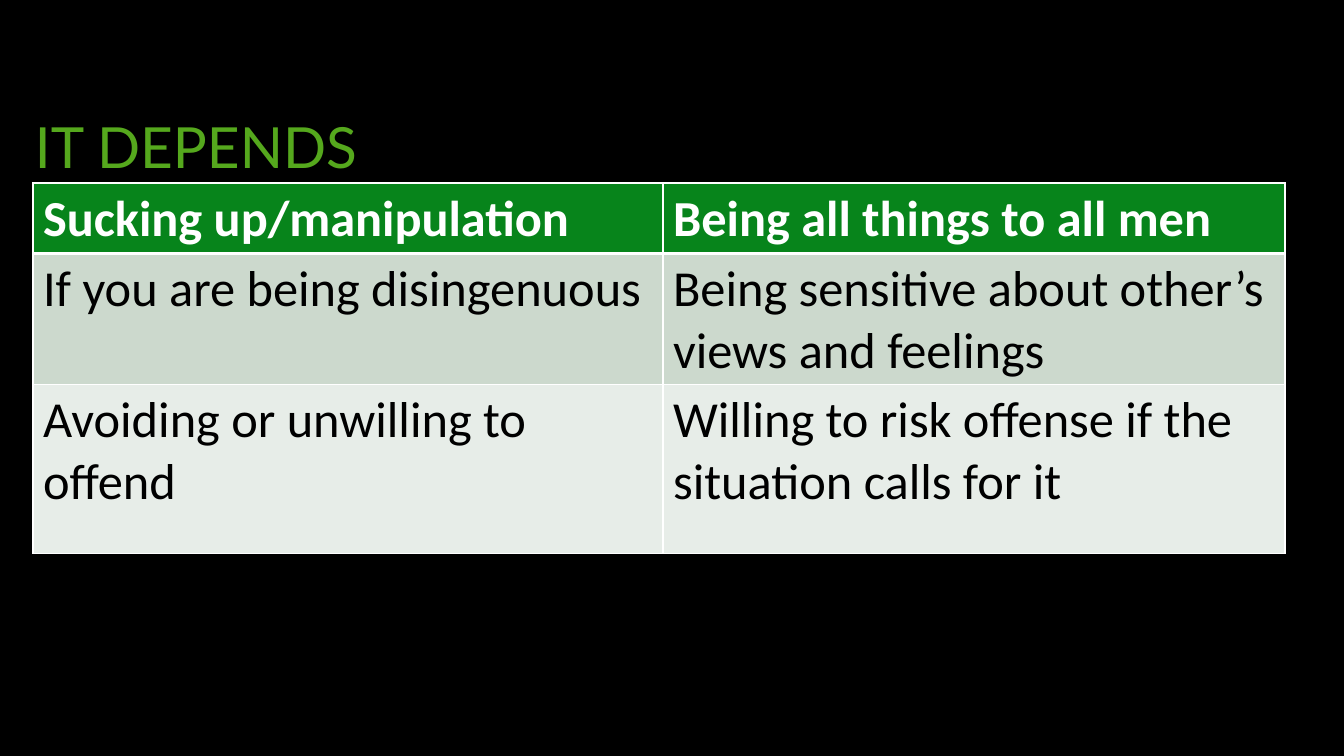
"""Build a slide with a title and a two-column comparison table."""
from lxml import etree
from pptx import Presentation, util as u
from pptx.dml.color import RGBColor
from pptx.enum import text
from pptx.oxml.ns import qn

HEAD = "IT DEPENDS"
ROWS = [
    ("Sucking up/manipulation", "Being all things to all men"),
    ("If you are being disingenuous",
     "Being sensitive about other’s views and feelings"),
    ("Avoiding or unwilling to offend",
     "Willing to risk offense if the situation calls for it"),
]
WIDTHS = (630, 622)
HEIGHTS = (69, 116, 169)
SIZE = (1344, 756)
BOX = (25, 69, 1300, 163)
SPOT = (33, 183)

BLACK = RGBColor(0x00, 0x00, 0x00)
WHITE = RGBColor(0xFF, 0xFF, 0xFF)
LIME = RGBColor(0x55, 0xA8, 0x1D)
GREEN = RGBColor(0x07, 0x84, 0x1B)
SAGE = RGBColor(0xCC, 0xD9, 0xCD)
PALE = RGBColor(0xE7, 0xED, 0xE8)
FILLS = (GREEN, SAGE, PALE)


def px(n):
    """Turn pixels into EMU."""
    return u.Emu(round(n * 12192000 / 1344))


def write(frame, words, font="Calibri", size=36, color=BLACK, bold=False,
          space=None):
    """Put formatted words into a text frame."""
    frame.word_wrap = True
    para = frame.paragraphs[0]
    para.alignment = text.PP_ALIGN.LEFT
    if space:
        para.line_spacing = space
    run = para.add_run()
    run.text = words
    run.font.name = font
    run.font.size = u.Pt(size)
    run.font.bold = bold
    run.font.color.rgb = color


def edge(cell, **sides):
    """Draw white cell borders, ahead of the fill, with widths in points."""
    props = cell._tc.get_or_add_tcPr()
    for spot, (side, wide) in enumerate(sides.items()):
        line = etree.Element(qn(f"a:ln{side}"), w=str(u.Pt(wide)))
        fill = etree.SubElement(line, qn("a:solidFill"))
        etree.SubElement(fill, qn("a:srgbClr"), val=str(WHITE))
        props.insert(spot, line)


def main():
    """Make and save the slide."""
    deck = Presentation()
    deck.slide_width, deck.slide_height = map(px, SIZE)
    slide = deck.slides.add_slide(deck.slide_layouts[6])
    slide.background.fill.solid()
    slide.background.fill.fore_color.rgb = BLACK

    title = slide.shapes.add_textbox(*map(px, BOX)).text_frame
    title.vertical_anchor = text.MSO_ANCHOR.MIDDLE
    write(title, HEAD, font="Lato", size=40.5, color=LIME, space=0.9)

    area = (*SPOT, sum(WIDTHS), sum(HEIGHTS))
    table = slide.shapes.add_table(
        len(ROWS), len(WIDTHS), *map(px, area)).table
    for col, wide in zip(table.columns, WIDTHS):
        col.width = px(wide)
    for r, (row, high) in enumerate(zip(ROWS, HEIGHTS)):
        table.rows[r].height = px(high)
        top = r == 0
        for c, words in enumerate(row):
            cell = table.cell(r, c)
            cell.fill.solid()
            cell.fill.fore_color.rgb = FILLS[r]
            edge(cell, L=1, R=1, T=3 if r == 1 else 1, B=3 if top else 1)
            write(cell.text_frame, words, bold=top,
                  color=WHITE if top else BLACK)
    deck.save("out.pptx")


if __name__ == "__main__":
    main()
